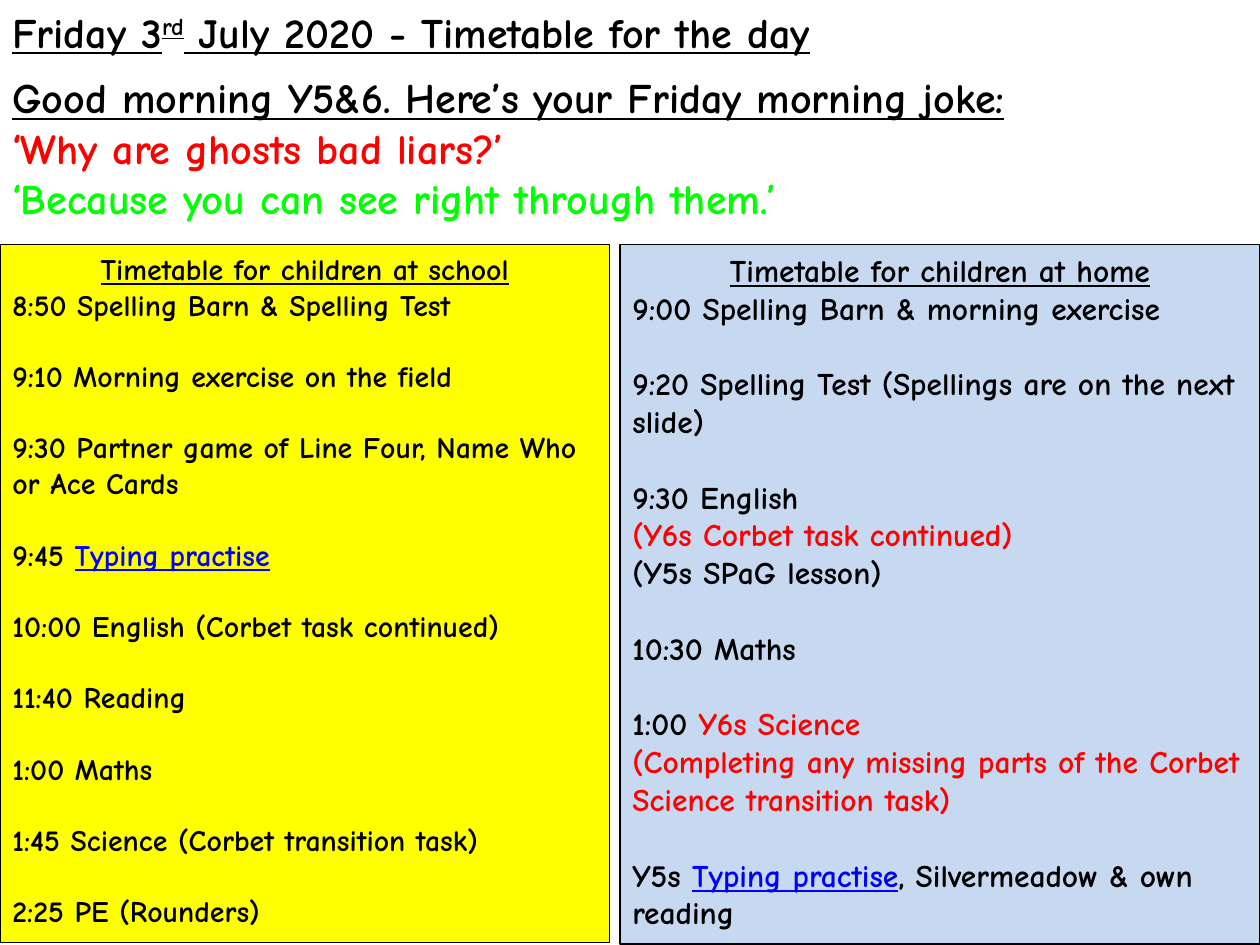
from pptx import Presentation
from pptx.dml.color import RGBColor
from pptx.enum.shapes import MSO_SHAPE
from pptx.enum.text import MSO_ANCHOR, MSO_AUTO_SIZE, PP_ALIGN
from pptx.util import Cm, Pt

RECTANGLE = MSO_SHAPE.RECTANGLE
TOP = MSO_ANCHOR.TOP
GROW = MSO_AUTO_SIZE.SHAPE_TO_FIT_TEXT
LEFT, CENTER = PP_ALIGN.LEFT, PP_ALIGN.CENTER

THEME = {
    "font": "Comic Neue",
    "title": 24, "school": 17, "home": 18,
    "black": RGBColor(0x00, 0x00, 0x00),
    "red": RGBColor(0xFF, 0x00, 0x00),
    "green": RGBColor(0x00, 0xFF, 0x00),
    "blue": RGBColor(0x00, 0x00, 0xFF),
    "yellow": RGBColor(0xFF, 0xFF, 0x00),
    "pale blue": RGBColor(0xC6, 0xD9, 0xF1),
}
LINE_HEIGHT = 1.2  # one line of Comic Neue, relative to its size


def add_run(paragraph, text, size, colour="black", underline=False):
    run = paragraph.add_run()
    run.text = text
    run.font.name = THEME["font"]
    run.font.size = Pt(size)
    run.font.bold = True
    run.font.underline = underline
    run.font.color.rgb = THEME[colour]
    return run


def prepare_frame(shape):
    frame = shape.text_frame
    frame.word_wrap = True
    frame.auto_size = GROW
    frame.vertical_anchor = TOP
    return frame


prs = Presentation()
prs.slide_width, prs.slide_height = Cm(25.4), Cm(19.05)
slide = prs.slides.add_slide(prs.slide_layouts[6])

# Date line
date_box = slide.shapes.add_textbox(Cm(0), Cm(0), Cm(25.4), Cm(1.27))
date_line = prepare_frame(date_box).paragraphs[0]
add_run(date_line, "Friday 3", THEME["title"], underline=True)
ordinal = add_run(date_line, "rd", THEME["title"], underline=True)
ordinal.font._element.set("baseline", "30000")
add_run(date_line, " July 2020 - Timetable for the day", THEME["title"], underline=True)

# Greeting and joke
joke_box = slide.shapes.add_textbox(Cm(0), Cm(1.32), Cm(25.4), Cm(3.33))
joke = prepare_frame(joke_box)
joke_lines = [
    ("Good morning Y5&6. Here’s your Friday morning joke:", "black", True),
    ("‘Why are ghosts bad liars?’", "red", False),
    ("‘Because you can see right through them.’", "green", False),
]
for i, (text, colour, underline) in enumerate(joke_lines):
    line = joke.add_paragraph() if i else joke.paragraphs[0]
    add_run(line, text, THEME["title"], colour, underline)

# Timetables: each session is a list of lines, each line a list of runs
typing_link = ("Typing practise", "blue", True)
school_sessions = [
    [[("8:50 Spelling Barn & Spelling Test",)]],
    [[("9:10 Morning exercise on the field",)]],
    [[("9:30 Partner game of Line Four, Name Who or Ace Cards",)]],
    [[("9:45 ",), typing_link]],
    [[("10:00 English (Corbet task continued)",)]],
    [[("11:40 Reading",)]],
    [[("1:00 Maths",)]],
    [[("1:45 Science (Corbet transition task)",)]],
    [[("2:25 PE (Rounders)",)]],
]
home_sessions = [
    [[("9:00 Spelling Barn & morning exercise",)]],
    [[("9:20 Spelling Test (Spellings are on the next slide)",)]],
    [[("9:30 English",)],
     [("(Y6s Corbet task continued)", "red")],
     [("(Y5s SPaG lesson)",)]],
    [[("10:30 Maths",)]],
    [[("1:00 ",), ("Y6s Science", "red")],
     [("(Completing any missing parts of the Corbet Science transition task)", "red")]],
    [[("Y5s ",), typing_link, (", Silvermeadow & own reading",)]],
]
timetables = [
    ("school", 0, 12.29, 14.07, "yellow", school_sessions),
    ("home", 12.5, 12.9, 14.1, "pale blue", home_sessions),
]
for place, left, width, height, fill, sessions in timetables:
    panel = slide.shapes.add_shape(RECTANGLE, Cm(left), Cm(4.93), Cm(width), Cm(height))
    panel.shadow.inherit = False
    panel.fill.solid()
    panel.fill.fore_color.rgb = THEME[fill]
    panel.line.color.rgb = THEME["black"]
    panel.line.width = Pt(0.75)

    size = THEME[place]
    timetable = prepare_frame(panel)
    heading = timetable.paragraphs[0]
    heading.alignment = CENTER
    add_run(heading, f"Timetable for children at {place}", size, underline=True)

    for session_no, session in enumerate(sessions):
        for line_no, runs in enumerate(session):
            line = timetable.add_paragraph()
            line.alignment = LEFT
            # One empty line's height before every session but the first
            if session_no and not line_no:
                line.space_before = Pt(round(size * LINE_HEIGHT, 1))
            for text, *style in runs:
                add_run(line, text, size, *style)

prs.save("out.pptx")
